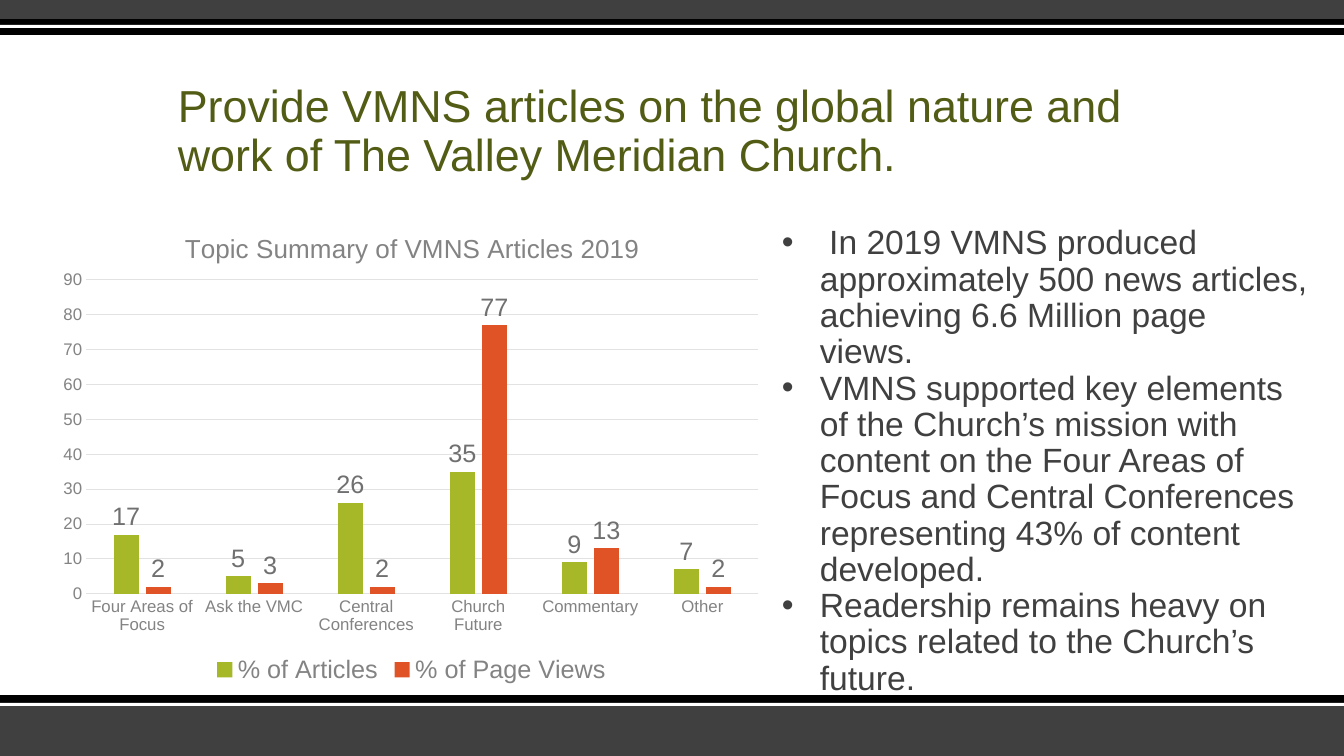
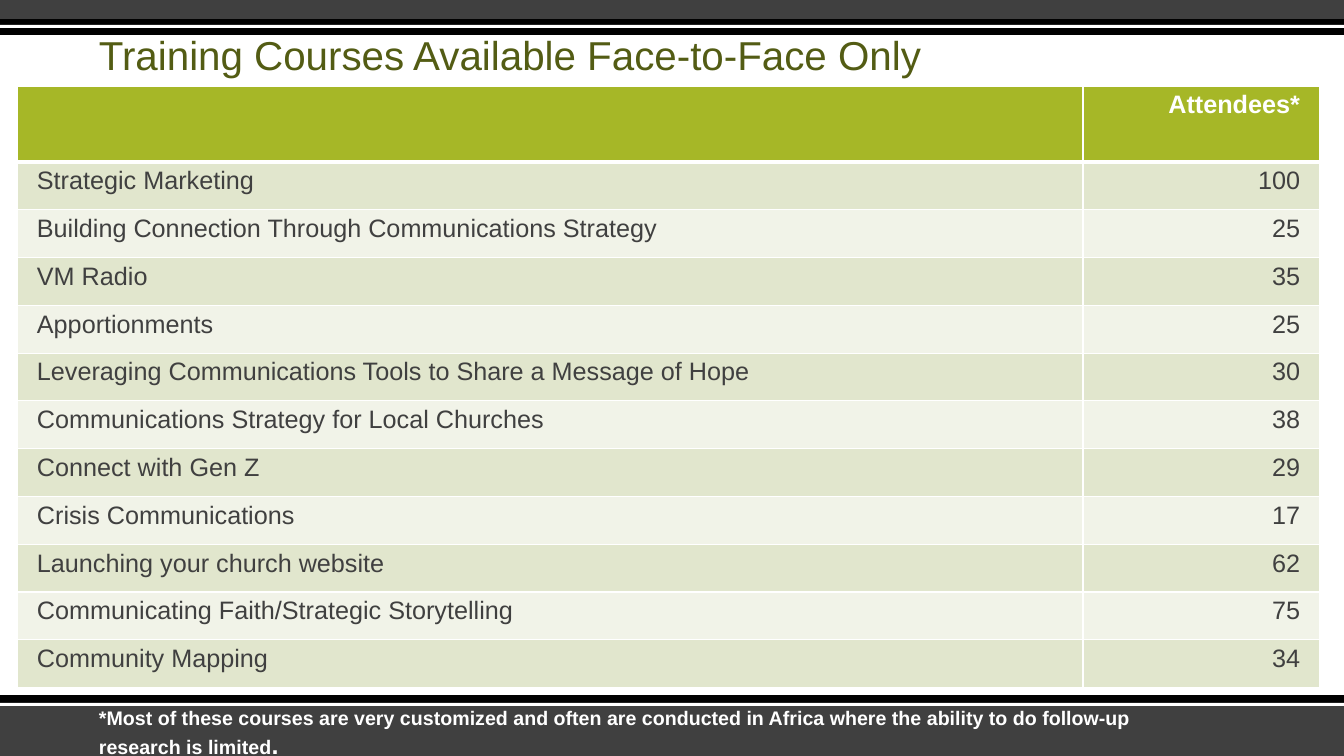
import pptx
import pptx.util
import pptx.chart.data
import pptx.dml.color
import pptx.enum.chart
import pptx.enum.shapes
import pptx.enum.text
import pptx.oxml
import pptx.oxml.ns
import lxml.etree

PX = 12192000 / 1344
FONT = "Arial"
WHITE, BLACK, CHARCOAL = "FFFFFF", "000000", "404040"
OLIVE, GREEN, ORANGE = "535C14", "A6B727", "DF5327"
GREY, LABEL_GREY, GRID_GREY = "838383", "707070", "E2E2E2"
ROW_FILLS = ["E1E6CD", "F1F3E8"]
BANDS = [  # top, height, colour
    (706, 50, CHARCOAL), (695, 11, BLACK), (703, 3, WHITE),
    (0, 19, CHARCOAL), (19, 16, BLACK), (25, 3, WHITE),
]
LEFT = pptx.enum.text.PP_ALIGN.LEFT
RIGHT = pptx.enum.text.PP_ALIGN.RIGHT


def px(length):
    return pptx.util.Emu(round(length * PX))


def color(value):
    return pptx.dml.color.RGBColor.from_string(value)


def set_font(font, size, value, bold=False):
    font.name = FONT
    font.size = pptx.util.Pt(size)
    font.color.rgb = color(value)
    font.bold = bold


def set_line(line, value, width=0.75):
    line.color.rgb = color(value)
    line.width = pptx.util.Pt(width)


def child(parent, tag, index=None, **attributes):
    """Add an XML child at the given index, or last."""
    element = lxml.etree.Element(pptx.oxml.ns.qn(tag), attributes)
    parent.insert(len(parent) if index is None else index, element)
    return element


def set_layout(parent, index, **fractions):
    """Place a chart part by fractions of the chart area."""
    old = parent.find(pptx.oxml.ns.qn("c:layout"))
    if old is not None:
        parent.remove(old)
    layout = child(child(parent, "c:layout", index), "c:manualLayout")
    if "w" in fractions:
        child(layout, "c:layoutTarget", val="inner")
    for axis in "xy":
        child(layout, f"c:{axis}Mode", val="edge")
    for name, value in fractions.items():
        child(layout, f"c:{name}", val=str(value))


class Deck:
    def __init__(self):
        self.file = pptx.Presentation()
        self.file.slide_width = px(1344)
        self.file.slide_height = px(756)
        self.page = None

    def add_page(self):
        self.page = self.file.slides.add_slide(self.file.slide_layouts[6])
        for top, height, fill in BANDS:
            self.band(top, height, fill)

    def band(self, top, height, fill):
        band = self.page.shapes.add_shape(
            pptx.enum.shapes.MSO_SHAPE.RECTANGLE, 0, px(top), px(1344), px(height))
        band.shadow.inherit = False
        band.fill.solid()
        band.fill.fore_color.rgb = color(fill)
        band.line.fill.background()

    def text(self, area, lines, size, value, bold=False, spacing=None):
        box = self.page.shapes.add_textbox(*map(px, area))
        frame = box.text_frame
        frame.word_wrap = True
        frame.text = "\n".join(lines)
        for para in frame.paragraphs:
            para.line_spacing = spacing
            for span in para.runs:
                set_font(span.font, size, value, bold)
        return frame

    def title(self, area, words, size):
        frame = self.text(area, [words], size, OLIVE, spacing=0.9)
        frame.vertical_anchor = pptx.enum.text.MSO_ANCHOR.BOTTOM

    def bullets(self, area, lines):
        frame = self.text(area, lines, 24, CHARCOAL, spacing=0.9)
        for para in frame.paragraphs:
            props = para._p.get_or_add_pPr()
            props.set("marL", str(px(38)))
            props.set("indent", str(-px(38)))
            child(props, "a:buFont", typeface=FONT)
            child(props, "a:buChar", char="•")

    def column_chart(self, area, heading, categories, series):
        data = pptx.chart.data.CategoryChartData()
        data.categories = categories
        for name, values, _ in series:
            data.add_series(name, values)
        chart = self.page.shapes.add_chart(
            pptx.enum.chart.XL_CHART_TYPE.COLUMN_CLUSTERED, *map(px, area), data).chart
        set_font(chart.font, 10, CHARCOAL)

        # Heading and plot placement
        chart.has_title = True
        heading_frame = chart.chart_title.text_frame
        heading_frame.text = heading
        set_font(heading_frame.paragraphs[0].runs[0].font, 18.6, GREY)
        set_layout(chart.chart_title._element, 1, x=0.18, y=0.05)
        set_layout(chart._chartSpace.chart.plotArea, 0, x=0.05, y=0.16, w=0.93, h=0.645)

        # Legend
        chart.has_legend = True
        chart.legend.position = pptx.enum.chart.XL_LEGEND_POSITION.BOTTOM
        chart.legend.include_in_layout = False
        set_font(chart.legend.font, 18, GREY)

        # Axes
        for axis in (chart.category_axis, chart.value_axis):
            axis.major_tick_mark = pptx.enum.chart.XL_TICK_MARK.NONE
            axis.minor_tick_mark = pptx.enum.chart.XL_TICK_MARK.NONE
            set_font(axis.tick_labels.font, 12, GREY)
        set_line(chart.category_axis.format.line, GRID_GREY)
        scale = chart.value_axis
        scale.minimum_scale, scale.maximum_scale, scale.major_unit = 0, 90, 10
        scale.format.line.fill.background()
        set_line(scale.major_gridlines.format.line, GRID_GREY)

        # Columns and their labels
        plot = chart.plots[0]
        plot.gap_width, plot.overlap, plot.vary_by_categories = 219, -27, False
        for columns, (_, _, fill) in zip(plot.series, series):
            columns.format.fill.solid()
            columns.format.fill.fore_color.rgb = color(fill)
            labels = columns.data_labels
            labels.show_value = True
            labels.position = pptx.enum.chart.XL_LABEL_POSITION.OUTSIDE_END
            set_font(labels.font, 18, LABEL_GREY)

    def cell(self, cell, words, align, fill, value, bold, top, bottom):
        cell.margin_left = cell.margin_right = px(20)
        cell.margin_top = cell.margin_bottom = px(5)
        cell.text = words
        para = cell.text_frame.paragraphs[0]
        para.alignment = align
        for span in para.runs:
            set_font(span.font, 18, value, bold)
        cell.fill.solid()
        cell.fill.fore_color.rgb = color(fill)
        props = cell._tc.get_or_add_tcPr()
        widths = {"L": 1, "R": 1, "T": top, "B": bottom}
        for index, (side, width) in enumerate(widths.items()):
            border = child(props, f"a:ln{side}", index, w=str(pptx.util.Pt(width)))
            child(child(border, "a:solidFill"), "a:srgbClr", val=WHITE)

    def table(self, area, widths, head_height, rows):
        table = self.page.shapes.add_table(
            len(rows), len(widths), *map(px, area)).table
        table.first_row = table.horz_banding = False
        for column, width in zip(table.columns, widths):
            column.width = px(width)
        body_height = (area[3] - head_height) / (len(rows) - 1)
        for number, row in enumerate(rows):
            head = number == 0
            table.rows[number].height = px(head_height if head else body_height)
            fill = GREEN if head else ROW_FILLS[(number - 1) % 2]
            for column, (words, align) in enumerate(zip(row, (LEFT, RIGHT))):
                self.cell(table.cell(number, column), words, align, fill,
                          WHITE if head else CHARCOAL, head,
                          top=3 if number == 1 else 1, bottom=3 if head else 1)


def article_page(deck):
    deck.add_page()
    deck.title((168, 68, 1008, 118),
               "Provide VMNS articles on the global nature and work of "
               "The Valley Meridian Church.", 32)
    deck.column_chart(
        (50, 202, 723, 487), "Topic Summary of VMNS Articles 2019",
        ["Four Areas of Focus", "Ask the VMC", "Central Conferences",
         "Church Future", "Commentary", "Other"],
        [("% of Articles", (17, 5, 26, 35, 9, 7), GREEN),
         ("% of Page Views", (2, 3, 2, 77, 13, 2), ORANGE)])
    deck.bullets((772, 221, 546, 487), [
        " In 2019 VMNS produced approximately 500 news articles, "
        "achieving 6.6 Million page views.",
        "VMNS supported key elements of the Church’s mission with content on the "
        "Four Areas of Focus and Central Conferences representing 43% of content "
        "developed.",
        "Readership remains heavy on topics related to the Church’s future.",
    ])


def course_page(deck):
    deck.add_page()
    deck.title((89, 33, 1159, 51), "Training Courses Available Face-to-Face Only", 28.8)
    deck.table((17, 86, 1303, 602), (1066, 237), 76, [
        ("", "Attendees*"),
        ("Strategic Marketing", "100"),
        ("Building Connection Through Communications Strategy", "25"),
        ("VM Radio", "35"),
        ("Apportionments", "25"),
        ("Leveraging Communications Tools to Share a Message of Hope", "30"),
        ("Communications Strategy for Local Churches", "38"),
        ("Connect with Gen Z", "29"),
        ("Crisis Communications", "17"),
        ("Launching your church website", "62"),
        ("Communicating Faith/Strategic Storytelling", "75"),
        ("Community Mapping", "34"),
    ])
    note = deck.text(
        (89, 701, 1131, 65),
        ["*Most of these courses are very customized and often are conducted in "
         "Africa where the ability to do follow-up research is limited"],
        14, WHITE, bold=True)
    stop = note.paragraphs[0].add_run()
    stop.text = "."
    set_font(stop.font, 18, WHITE, bold=True)


def main():
    deck = Deck()
    article_page(deck)
    course_page(deck)
    deck.file.save("out.pptx")


if __name__ == "__main__":
    main()
